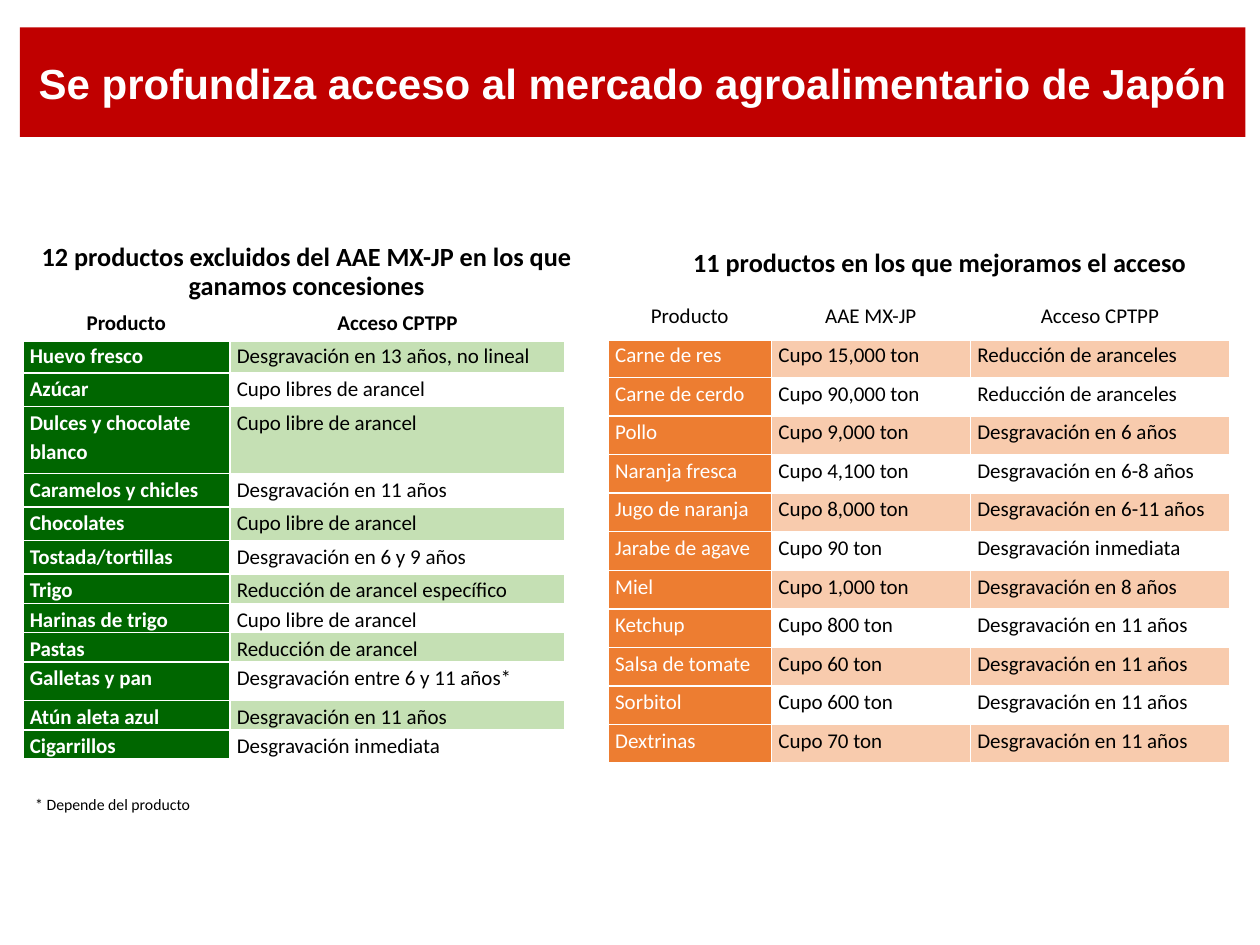
import pptx
import pptx.dml.color
import pptx.enum.shapes
import pptx.enum.text
import pptx.oxml
import pptx.oxml.ns
import pptx.util

Pt = pptx.util.Pt
Align = pptx.enum.text.PP_ALIGN
WHITE, BLACK, RED = "FFFFFF", "000000", "C00000"

EXCLUDED_PRODUCTS = [
    ("Producto", "Acceso CPTPP"),
    ("Huevo fresco", "Desgravación en 13 años, no lineal"),
    ("Azúcar", "Cupo libres de arancel"),
    ("Dulces y chocolate blanco", "Cupo libre de arancel"),
    ("Caramelos y chicles", "Desgravación en 11 años"),
    ("Chocolates", "Cupo libre de arancel"),
    ("Tostada/tortillas", "Desgravación en 6 y 9 años"),
    ("Trigo", "Reducción de arancel específico"),
    ("Harinas de trigo", "Cupo libre de arancel"),
    ("Pastas", "Reducción de arancel"),
    ("Galletas y pan", "Desgravación entre 6 y 11 años*"),
    ("Atún aleta azul", "Desgravación en 11 años"),
    ("Cigarrillos", "Desgravación inmediata"),
]
IMPROVED_PRODUCTS = [
    ("Producto", "AAE MX-JP", "Acceso CPTPP"),
    ("Carne de res", "Cupo 15,000 ton", "Reducción de aranceles"),
    ("Carne de cerdo", "Cupo 90,000 ton", "Reducción de aranceles"),
    ("Pollo", "Cupo 9,000 ton", "Desgravación en 6 años"),
    ("Naranja fresca", "Cupo 4,100 ton", "Desgravación en 6-8 años"),
    ("Jugo de naranja", "Cupo 8,000 ton", "Desgravación en 6-11 años"),
    ("Jarabe de agave", "Cupo 90 ton", "Desgravación inmediata"),
    ("Miel", "Cupo 1,000 ton", "Desgravación en 8 años"),
    ("Ketchup", "Cupo 800 ton", "Desgravación en 11 años"),
    ("Salsa de tomate", "Cupo 60 ton", "Desgravación en 11 años"),
    ("Sorbitol", "Cupo 600 ton", "Desgravación en 11 años"),
    ("Dextrinas", "Cupo 70 ton", "Desgravación en 11 años"),
]


def color(hex_value):
    return pptx.dml.color.RGBColor.from_string(hex_value)


class SlideBuilder:
    """Holds the text style and the slide being filled."""

    font = "Calibri"
    table_size = 12

    def __init__(self, slide):
        self.slide = slide

    def add_text(self, frame, text, size, ink=BLACK, bold=False, align=Align.LEFT,
                 spacing=None, font=None):
        para = frame.paragraphs[0]
        para.alignment = align
        para.line_spacing = spacing
        span = para.add_run()
        span.text = text
        span.font.name = font or self.font
        span.font.size = Pt(size)
        span.font.bold = bold
        span.font.color.rgb = color(ink)

    def label(self, left, top, width, height, text, size, wrap=True, **style):
        box = self.slide.shapes.add_textbox(Pt(left), Pt(top), Pt(width), Pt(height))
        box.text_frame.word_wrap = wrap
        self.add_text(box.text_frame, text, size, **style)
        return box

    def banner(self, left, top, width, height, text, size, fill):
        box = self.slide.shapes.add_shape(
            pptx.enum.shapes.MSO_SHAPE.RECTANGLE,
            Pt(left), Pt(top), Pt(width), Pt(height))
        box.shadow.inherit = False
        box.fill.solid()
        box.fill.fore_color.rgb = color(fill)
        box.line.fill.background()
        box.text_frame.word_wrap = True
        box.text_frame.vertical_anchor = pptx.enum.text.MSO_ANCHOR.MIDDLE
        self.add_text(box.text_frame, text, size, ink=WHITE, bold=True,
                      align=Align.CENTER, font="Arial")

    def borders(self, cell, bottom):
        properties = cell._tc.get_or_add_tcPr()
        for index, (side, width) in enumerate(
                [("L", 1), ("R", 1), ("T", 1), ("B", bottom)]):
            properties.insert(index, pptx.oxml.parse_xml(
                f'<a:ln{side} {pptx.oxml.ns.nsdecls("a")} w="{Pt(width)}">'
                f'<a:solidFill><a:srgbClr val="{WHITE}"/></a:solidFill></a:ln{side}>'))

    def table(self, left, top, widths, heights, rows, accent, band, bold_heads):
        frame = self.slide.shapes.add_table(
            len(rows), len(widths), Pt(left), Pt(top),
            Pt(sum(widths)), Pt(sum(heights)))
        table = frame.table
        for column, width in zip(table.columns, widths):
            column.width = Pt(width)
        for row, height in zip(table.rows, heights):
            row.height = Pt(height)
        for r, values in enumerate(rows):
            for c, value in enumerate(values):
                is_header, is_product = r == 0, r > 0 and c == 0
                cell = table.cell(r, c)
                cell.margin_left = cell.margin_right = Pt(4)
                cell.margin_top = cell.margin_bottom = Pt(0)
                cell.fill.solid()
                cell.fill.fore_color.rgb = color(
                    accent if is_product else band if r % 2 else WHITE)
                self.borders(cell, bottom=3 if is_header else 1)
                self.add_text(cell.text_frame, value, self.table_size,
                              ink=WHITE if is_product else BLACK,
                              bold=bold_heads and (is_header or is_product),
                              align=Align.CENTER if is_header else Align.LEFT,
                              spacing=1.15)


def main():
    deck = pptx.Presentation()
    deck.slide_width, deck.slide_height = Pt(720), Pt(540)
    page = SlideBuilder(deck.slides.add_slide(deck.slide_layouts[6]))
    heading = dict(size=15, bold=True, align=Align.CENTER, spacing=0.9)

    # Table headings
    page.label(13, 136, 324.5, 35,
               "12 productos excluidos del AAE MX-JP en los que ganamos concesiones",
               **heading)
    improved = page.label(381.5, 139.7, 311, 35,
                          "11 productos en los que mejoramos el acceso", **heading)
    frame = improved.text_frame
    frame.margin_left = frame.margin_right = Pt(5)
    frame.margin_top = frame.margin_bottom = Pt(3)

    # Products excluded from the earlier agreement
    normal, double, low, tall = 19.15, 38.3, 16.75, 22.1
    page.table(13, 175, [118.3, 191.7],
               [normal] * 3 + [double] + [normal] * 3 + [low] * 3 + [tall] + [low] * 2,
               EXCLUDED_PRODUCTS, accent="006600", band="C5E0B4", bold_heads=True)

    # Products with improved access
    page.table(347.5, 171.5, [93.3, 113.7, 148.2], [22.08] * len(IMPROVED_PRODUCTS),
               IMPROVED_PRODUCTS, accent="ED7D31", band="F8CBAD", bold_heads=False)

    # Footnote
    note = page.label(13, 450.7, 104.5, 18, "* Depende del producto", 9, wrap=False)
    note.text_frame.auto_size = pptx.enum.text.MSO_AUTO_SIZE.SHAPE_TO_FIT_TEXT

    # Title banner
    page.banner(11.3, 15.7, 700.4, 62.5,
                "Se profundiza acceso al mercado agroalimentario de Japón", 24, RED)

    deck.save("out.pptx")


if __name__ == "__main__":
    main()
